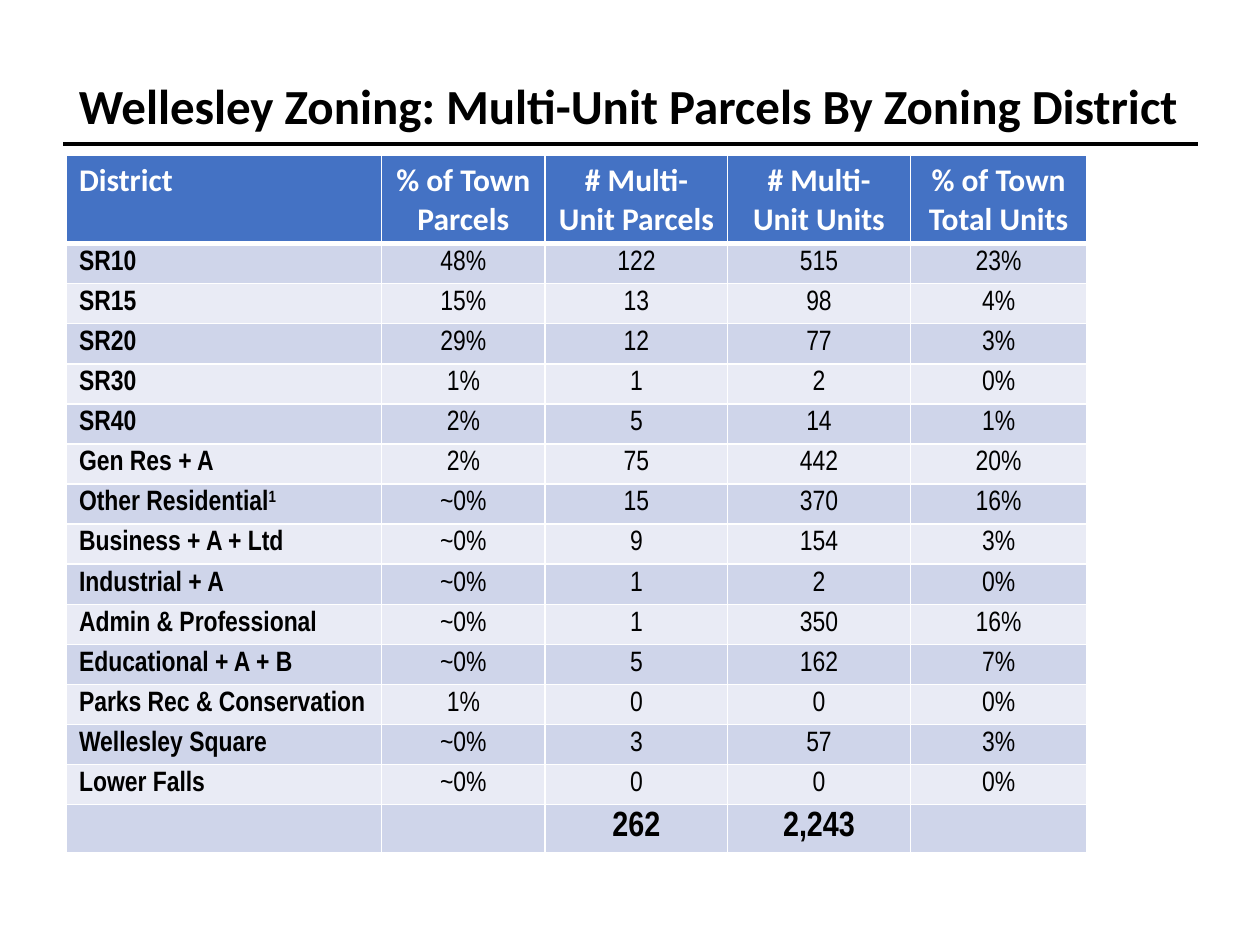
from lxml import etree
from pptx import Presentation
from pptx.dml.color import RGBColor
from pptx.enum.shapes import MSO_CONNECTOR
from pptx.enum.text import MSO_ANCHOR, PP_ALIGN
from pptx.oxml.ns import qn
from pptx.util import Cm, Pt

STRAIGHT = MSO_CONNECTOR.STRAIGHT
BOTTOM = MSO_ANCHOR.BOTTOM
LEFT, CENTER = PP_ALIGN.LEFT, PP_ALIGN.CENTER

BLACK = RGBColor(0x00, 0x00, 0x00)
WHITE = RGBColor(0xFF, 0xFF, 0xFF)
HEADER_BLUE = RGBColor(0x44, 0x72, 0xC4)
BAND_DARK = RGBColor(0xCF, 0xD5, 0xEA)
BAND_LIGHT = RGBColor(0xE9, 0xEB, 0xF5)

HEADINGS = ["District", "% of Town Parcels", "# Multi-Unit Parcels",
            "# Multi-Unit Units", "% of Town Total Units"]
DISTRICTS = [
    ("SR10", "48%", "122", "515", "23%"),
    ("SR15", "15%", "13", "98", "4%"),
    ("SR20", "29%", "12", "77", "3%"),
    ("SR30", "1%", "1", "2", "0%"),
    ("SR40", "2%", "5", "14", "1%"),
    ("Gen Res + A", "2%", "75", "442", "20%"),
    ("Other Residential", "~0%", "15", "370", "16%"),
    ("Business + A + Ltd", "~0%", "9", "154", "3%"),
    ("Industrial + A", "~0%", "1", "2", "0%"),
    ("Admin & Professional", "~0%", "1", "350", "16%"),
    ("Educational + A + B", "~0%", "5", "162", "7%"),
    ("Parks Rec & Conservation", "1%", "0", "0", "0%"),
    ("Wellesley Square", "~0%", "3", "57", "3%"),
    ("Lower Falls", "~0%", "0", "0", "0%"),
]
TOTALS = ("", "", "262", "2,243", "")
FOOTNOTE_MARKS = {"Other Residential": "1"}
COLUMN_WIDTHS = [Cm(6.35), Cm(3.3), Cm(3.68), Cm(3.68), Cm(3.56)]
HEADER_HEIGHT, DISTRICT_HEIGHT, TOTAL_HEIGHT = Cm(1.77), Cm(0.76), Cm(0.89)


def style_span(span, name, size, color, bold):
    """Set the font of one run."""
    span.font.name = name
    span.font.size = Pt(size)
    span.font.color.rgb = color
    span.font.bold = bold


def add_title(page, text):
    """Add the bottom-anchored slide title."""
    box = page.shapes.add_textbox(Cm(1.34), Cm(0.5), Cm(22.8), Cm(2.34))
    frame = box.text_frame
    frame.word_wrap = True
    frame.vertical_anchor = BOTTOM
    frame.text = text
    para = frame.paragraphs[0]
    para.line_spacing = 0.9
    style_span(para.runs[0], "Calibri", 28, BLACK, True)


def add_rule(page):
    """Add the black line under the title."""
    rule = page.shapes.add_connector(STRAIGHT, Cm(1.27), Cm(2.9), Cm(24.15), Cm(2.9))
    rule.line.color.rgb = BLACK
    rule.line.width = Pt(2.25)
    etree.SubElement(rule._element.spPr, qn("a:effectLst"))


def set_borders(cell, widths):
    """Draw white cell borders with the given width in points per side."""
    properties = cell._tc.get_or_add_tcPr()
    for position, (side, width) in enumerate(widths.items()):
        line = etree.Element(qn(f"a:ln{side}"), w=str(Pt(width)))
        fill = etree.SubElement(line, qn("a:solidFill"))
        etree.SubElement(fill, qn("a:srgbClr"), val=str(WHITE))
        properties.insert(position, line)


def fill_cell(cell, text, align, fill, font, top=1, bottom=1):
    """Write one cell with its fill, borders and font."""
    cell.fill.solid()
    cell.fill.fore_color.rgb = fill
    set_borders(cell, {"L": 1, "R": 1, "T": top, "B": bottom})
    cell.text_frame.text = text
    para = cell.text_frame.paragraphs[0]
    para.alignment = align
    if text in FOOTNOTE_MARKS:
        mark = para.add_run()
        mark.text = FOOTNOTE_MARKS[text]
        mark.font._element.set("baseline", "30000")
    for span in para.runs:
        style_span(span, *font)


def add_zoning_table(page):
    """Add the table of districts with its header and total rows."""
    rows = [HEADINGS, *DISTRICTS, TOTALS]
    heights = [HEADER_HEIGHT, *[DISTRICT_HEIGHT] * len(DISTRICTS), TOTAL_HEIGHT]
    table = page.shapes.add_table(len(rows), len(HEADINGS), Cm(1.34), Cm(3.13),
                                  sum(COLUMN_WIDTHS), sum(heights)).table
    for column, width in zip(table.columns, COLUMN_WIDTHS):
        column.width = width
    for row_index, (values, height) in enumerate(zip(rows, heights)):
        table.rows[row_index].height = height
        band = BAND_DARK if row_index % 2 else BAND_LIGHT
        for column_index, text in enumerate(values):
            cell = table.cell(row_index, column_index)
            align = CENTER if column_index else LEFT
            if row_index == 0:
                fill_cell(cell, text, align, HEADER_BLUE,
                          ("Calibri", 18, WHITE, True), bottom=3)
                continue
            is_total = values is TOTALS
            cell.margin_top = Cm(0.13)
            cell.margin_bottom = 0
            font = ("Arial Narrow", 20 if is_total else 16, BLACK,
                    is_total or column_index == 0)
            fill_cell(cell, text, align, band, font, top=3 if row_index == 1 else 1)


def main():
    """Build the slide and save it."""
    deck = Presentation()
    deck.slide_width, deck.slide_height = Cm(25.4), Cm(19.05)
    page = deck.slides.add_slide(deck.slide_layouts[6])
    add_rule(page)
    add_title(page, "Wellesley Zoning: Multi-Unit Parcels By Zoning District")
    add_zoning_table(page)
    deck.save("out.pptx")


if __name__ == "__main__":
    main()
